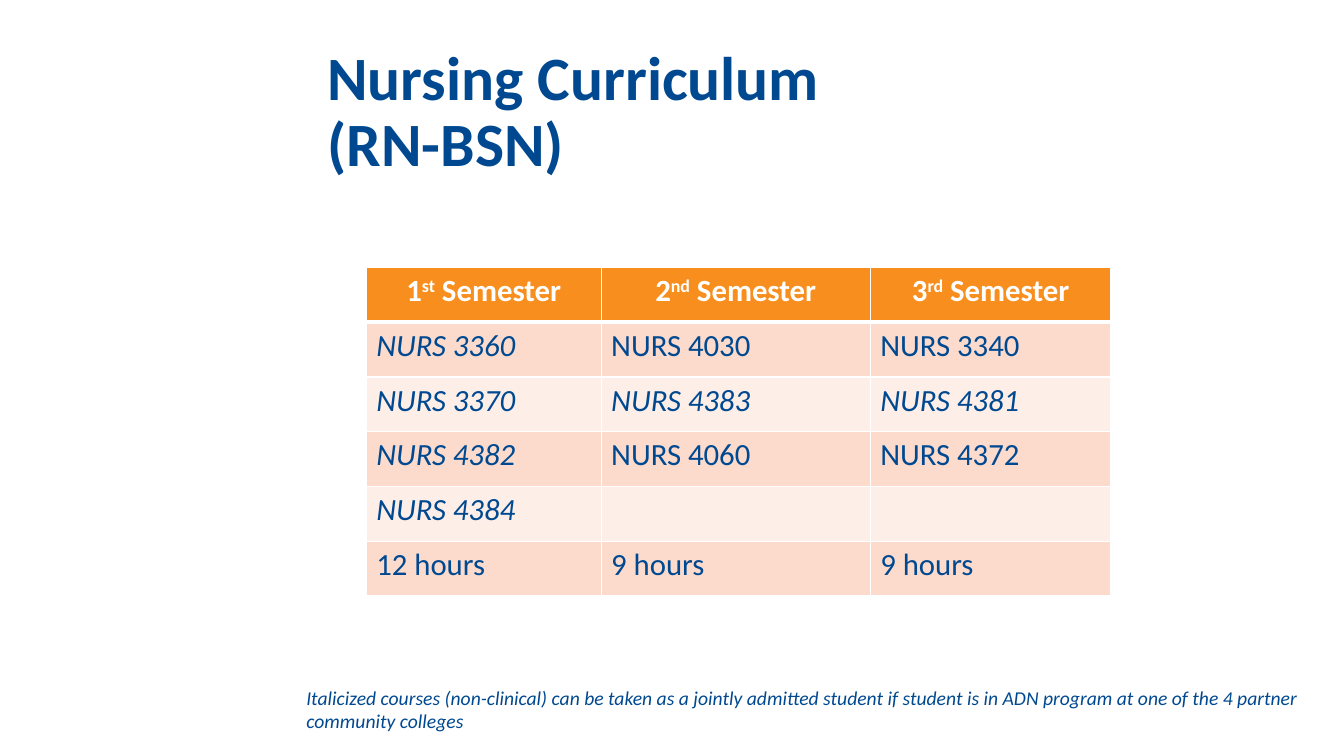
from lxml.etree import SubElement
from pptx import Presentation
from pptx.dml.color import RGBColor
from pptx.enum.text import MSO_ANCHOR, PP_ALIGN
from pptx.oxml.ns import qn
from pptx.util import Cm, Pt

NAVY = RGBColor(0x00, 0x49, 0x90)
ORANGE = RGBColor(0xF7, 0x8E, 0x1E)
PEACH = RGBColor(0xFC, 0xDB, 0xCD)
PALE_PEACH = RGBColor(0xFD, 0xEE, 0xE8)
WHITE = RGBColor(0xFF, 0xFF, 0xFF)

FONT = "Calibri"
SEMESTERS = [("1", "st"), ("2", "nd"), ("3", "rd")]
COURSES = [
    ["NURS 3360", "NURS 4030", "NURS 3340"],
    ["NURS 3370", "NURS 4383", "NURS 4381"],
    ["NURS 4382", "NURS 4060", "NURS 4372"],
    ["NURS 4384", "", ""],
    ["12 hours", "9 hours", "9 hours"],
]
NON_CLINICAL = {"NURS 3360", "NURS 3370", "NURS 4382", "NURS 4384",
                "NURS 4383", "NURS 4381"}
COLUMN_WIDTHS = [5.92, 6.78, 6.07]
ROW_HEIGHT = 1.38


def add_run(paragraph, text, size, color=NAVY, bold=False, italic=False):
    run = paragraph.add_run()
    run.text = text
    font = run.font
    font.name, font.size = FONT, Pt(size)
    font.bold, font.italic = bold, italic
    font.color.rgb = color
    return run


def add_text_frame(slide, left, top, width, height, anchor=MSO_ANCHOR.TOP):
    box = slide.shapes.add_textbox(Cm(left), Cm(top), Cm(width), Cm(height))
    frame = box.text_frame
    frame.word_wrap = True
    frame.vertical_anchor = anchor
    return frame


def add_title(slide, lines):
    frame = add_text_frame(slide, 8, 1.02, 23.52, 3.68, MSO_ANCHOR.MIDDLE)
    paragraph = frame.paragraphs[0]
    paragraph.line_spacing = 0.9
    for index, line in enumerate(lines):
        if index:
            paragraph.add_line_break()
        add_run(paragraph, line, 44, bold=True)


def style_cell(cell, fill, top=1, bottom=1):
    """Draw white borders, widths in points, and fill the cell."""
    properties = cell._tc.get_or_add_tcPr()
    for side, width in (("L", 1), ("R", 1), ("T", top), ("B", bottom)):
        border = SubElement(properties, qn(f"a:ln{side}"), w=str(Pt(width)))
        solid = SubElement(border, qn("a:solidFill"))
        SubElement(solid, qn("a:srgbClr"), val=str(WHITE))
    cell.fill.solid()
    cell.fill.fore_color.rgb = fill


def fill_header(cell, number, suffix):
    style_cell(cell, ORANGE, bottom=3)
    paragraph = cell.text_frame.paragraphs[0]
    paragraph.alignment = PP_ALIGN.CENTER
    add_run(paragraph, number, 22, WHITE, bold=True)
    ordinal = add_run(paragraph, suffix, 22, WHITE, bold=True)
    ordinal.font._element.set("baseline", "30000")
    add_run(paragraph, " Semester", 22, WHITE, bold=True)


def add_curriculum(slide):
    row_count = len(COURSES) + 1
    table = slide.shapes.add_table(
        row_count, len(SEMESTERS), Cm(9.23), Cm(6.74),
        Cm(sum(COLUMN_WIDTHS)), Cm(ROW_HEIGHT * row_count)).table
    for column, width in zip(table.columns, COLUMN_WIDTHS):
        column.width = Cm(width)
    for row in table.rows:
        row.height = Cm(ROW_HEIGHT)
    for column, (number, suffix) in enumerate(SEMESTERS):
        fill_header(table.cell(0, column), number, suffix)
    for row, courses in enumerate(COURSES, start=1):
        for column, course in enumerate(courses):
            cell = table.cell(row, column)
            style_cell(cell, PEACH if row % 2 else PALE_PEACH,
                       top=3 if row == 1 else 1)
            if course:
                add_run(cell.text_frame.paragraphs[0], course, 22,
                        italic=course in NON_CLINICAL)


def add_footnote(slide, text):
    frame = add_text_frame(slide, 7.47, 17.15, 25.65, 1.45)
    add_run(frame.paragraphs[0], text, 14, italic=True)


def main():
    presentation = Presentation()
    presentation.slide_width = Cm(33.87)
    presentation.slide_height = Cm(19.05)
    slide = presentation.slides.add_slide(presentation.slide_layouts[6])
    add_title(slide, ["Nursing Curriculum ", "(RN-BSN)"])
    add_curriculum(slide)
    add_footnote(slide, "Italicized courses (non-clinical) can be taken as a "
                        "jointly admitted student if student is in ADN program "
                        "at one of the 4 partner community colleges")
    presentation.save("out.pptx")


if __name__ == "__main__":
    main()
